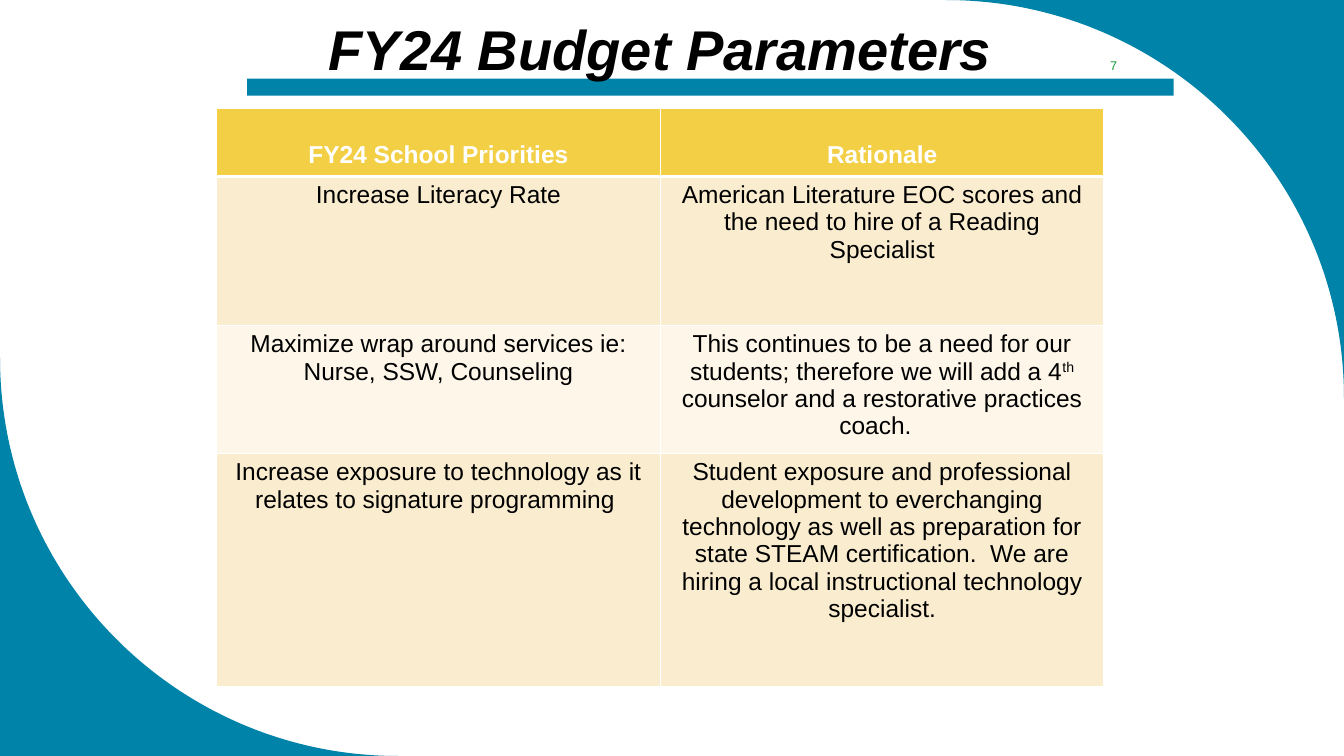
from dataclasses import dataclass

from lxml.etree import SubElement
from pptx import Presentation
from pptx.dml.color import RGBColor
from pptx.enum.shapes import MSO_SHAPE
from pptx.enum.text import MSO_ANCHOR, PP_ALIGN
from pptx.oxml.ns import qn
from pptx.util import Pt

PX = 9144  # 100 px to the inch
COLORS = {
    "teal": "0083A9", "gold": "F3CF45", "sand": "FAEDCF", "cream": "FDF6E9",
    "black": "000000", "white": "FFFFFF", "green": "159839",
}
ARC_PULL = 0.5523  # control distance of a quarter circle, as a share of its radius


@dataclass(frozen=True)
class Corner:
    tip: tuple[int, int]
    arc_start: tuple[int, int]
    arc_end: tuple[int, int]


@dataclass(frozen=True)
class Label:
    text: str
    box: tuple[int, int, int, int]
    anchor: MSO_ANCHOR
    font: dict


@dataclass(frozen=True)
class Row:
    height: int
    fill: str
    cells: tuple[str, str]
    header: bool = False


CORNERS = [
    Corner((1333, 0), (938, 0), (1333, 395)),
    Corner((0, 750), (395, 750), (0, 355)),
]
LABELS = [
    Label("FY24 Budget Parameters", (305, 9, 699, 77), MSO_ANCHOR.TOP,
          {"size": 40, "color": "black", "bold": True, "italic": True}),
    Label("7", (1064, 50, 81, 30), MSO_ANCHOR.MIDDLE, {"size": 9, "color": "green"}),
]
# A caret pair encloses superscript text.
ROWS = [
    Row(67, "gold", ("FY24 School Priorities", "Rationale"), header=True),
    Row(148, "sand", (
        "Increase Literacy Rate",
        "American Literature EOC scores and the need to hire of a Reading Specialist")),
    Row(127, "cream", (
        "Maximize wrap around services ie: Nurse, SSW, Counseling",
        "This continues to be a need for our students; therefore we will add a 4^th^ "
        "counselor and a restorative practices coach.  ")),
    Row(231, "sand", (
        "Increase exposure to technology as it relates to signature programming ",
        "Student exposure and professional development to everchanging technology as "
        "well as preparation for state STEAM certification.  We are hiring a local "
        "instructional technology specialist.")),
]


def rgb(name: str) -> RGBColor:
    return RGBColor.from_string(COLORS[name])


def emu(*lengths: int) -> list[int]:
    return [length * PX for length in lengths]


def paint(s, color: str) -> None:
    s.fill.solid()
    s.fill.fore_color.rgb = rgb(color)
    s.line.fill.background()
    s.shadow.inherit = False


def write(tf, text: str, font: dict) -> None:
    p = tf.paragraphs[0]
    p.alignment = PP_ALIGN.CENTER
    for i, part in enumerate(text.split("^")):
        r = p.add_run()
        r.text = part
        values = {"name": "Arial", **font, "size": Pt(font["size"])}
        r.font.color.rgb = rgb(values.pop("color"))
        for name, value in values.items():
            setattr(r.font, name, value)
        if i % 2:
            r._r.get_or_add_rPr().set("baseline", "30000")


def add_corner(shapes, corner: Corner) -> None:
    """Fill the area between a slide corner and a quarter circle."""
    builder = shapes.build_freeform(*emu(*corner.tip), scale=1.0)
    builder.add_line_segments([emu(*corner.arc_start), emu(*corner.arc_end)], close=True)
    s = builder.convert_to_shape()
    tip, start, end = [(int(pt.get("x")), int(pt.get("y")))
                       for pt in s._element.iter(qn("a:pt"))]
    chord = list(s._element.iter(qn("a:lnTo")))[-1]
    outline = chord.getparent()
    curve = SubElement(outline, qn("a:cubicBezTo"))
    controls = [tuple(round(a + ARC_PULL * (t - a)) for a, t in zip(point, tip))
                for point in (start, end)]
    for x, y in [*controls, end]:
        SubElement(curve, qn("a:pt"), x=str(x), y=str(y))
    outline.replace(chord, curve)
    paint(s, "teal")


def add_label(shapes, label: Label) -> None:
    tf = shapes.add_textbox(*emu(*label.box)).text_frame
    tf.word_wrap = True
    tf.vertical_anchor = label.anchor
    write(tf, label.text, label.font)


def set_header_borders(cell) -> None:
    tcPr = cell._tc.get_or_add_tcPr()
    for side, width in {"L": 1, "R": 1, "T": 1, "B": 3}.items():
        ln = SubElement(tcPr, qn(f"a:ln{side}"), w=str(Pt(width)))
        fill = SubElement(ln, qn("a:solidFill"))
        SubElement(fill, qn("a:srgbClr"), val=COLORS["white"])


def add_priorities_table(shapes) -> None:
    height = sum(row.height for row in ROWS)
    table = shapes.add_table(len(ROWS), 2, *emu(215, 108, 880, height)).table
    for i, row in enumerate(ROWS):
        table.rows[i].height = row.height * PX
        font = {"size": 17.5, "bold": row.header,
                "color": "white" if row.header else "black"}
        for j, text in enumerate(row.cells):
            cell = table.cell(i, j)
            if row.header:
                set_header_borders(cell)
                cell.vertical_anchor = MSO_ANCHOR.BOTTOM
                cell.margin_bottom = 8 * PX
            cell.fill.solid()
            cell.fill.fore_color.rgb = rgb(row.fill)
            write(cell.text_frame, text, font)


def main() -> None:
    prs = Presentation()
    prs.slide_width, prs.slide_height = emu(1333, 750)
    shapes = prs.slides.add_slide(prs.slide_layouts[6]).shapes
    for corner in CORNERS:
        add_corner(shapes, corner)
    paint(shapes.add_shape(MSO_SHAPE.RECTANGLE, *emu(245, 78, 919, 17)), "teal")
    title, number = LABELS
    add_label(shapes, title)
    add_priorities_table(shapes)
    add_label(shapes, number)
    prs.save("out.pptx")


if __name__ == "__main__":
    main()
